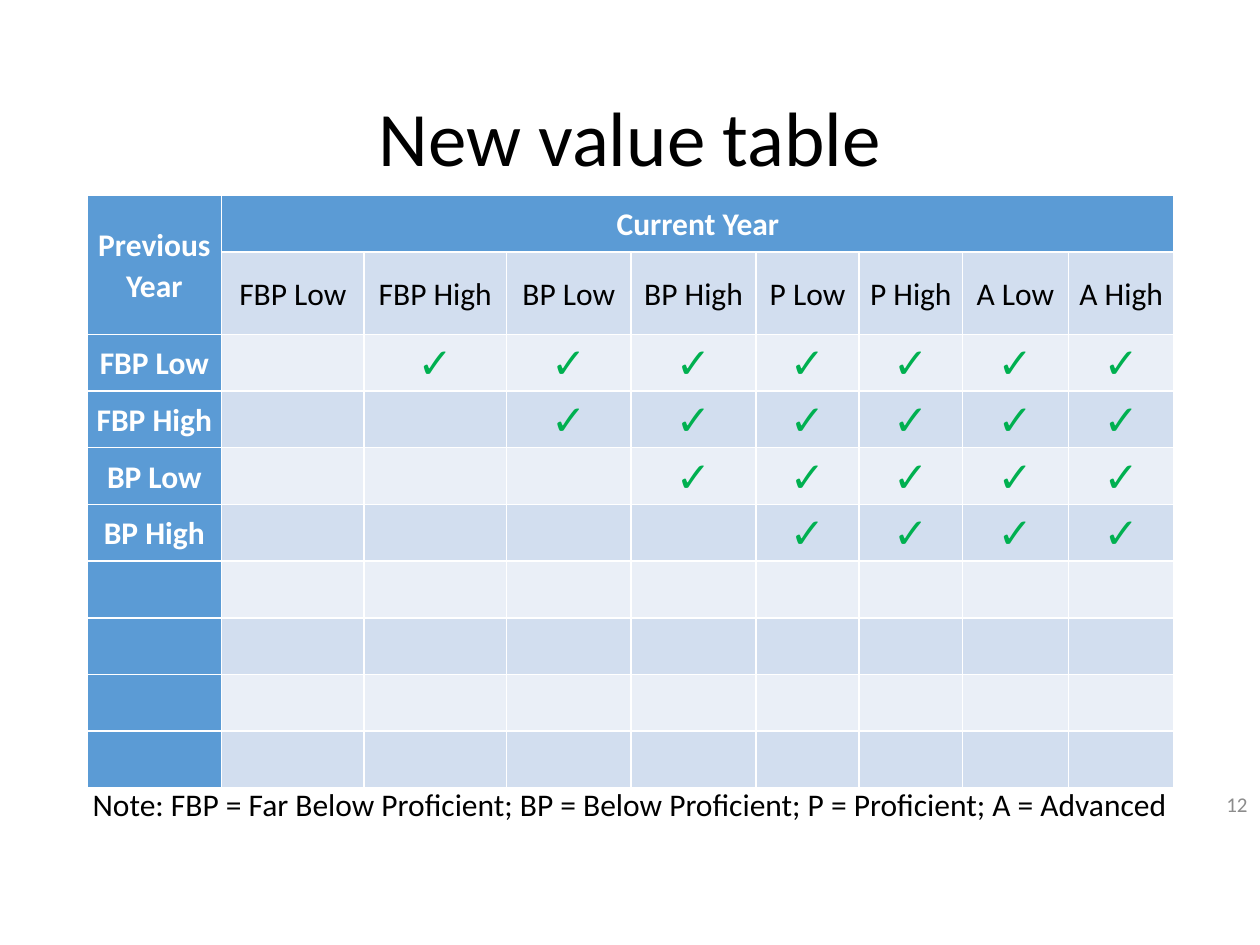
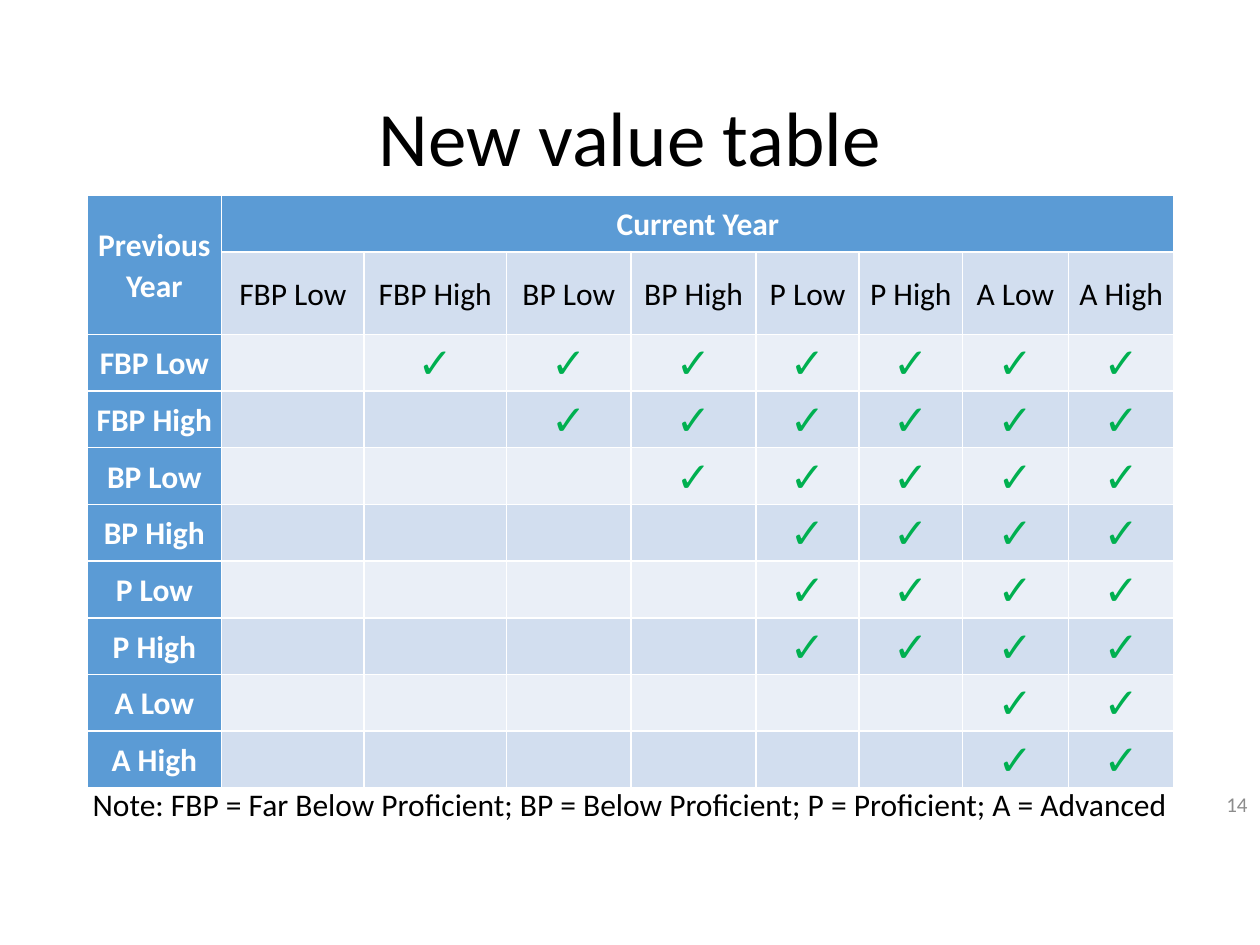
"""Builds two slides showing the new value table, half filled and then complete."""
from dataclasses import dataclass

from pptx import Presentation
from pptx.dml.color import RGBColor
from pptx.enum.text import MSO_ANCHOR, PP_ALIGN
from pptx.presentation import Presentation as Deck
from pptx.slide import Slide
from pptx.table import _Cell as Cell
from pptx.text.text import TextFrame
from pptx.util import Inches, Pt

MIDDLE, TOP = MSO_ANCHOR.MIDDLE, MSO_ANCHOR.TOP
CENTER, RIGHT = PP_ALIGN.CENTER, PP_ALIGN.RIGHT

WHITE = RGBColor(0xFF, 0xFF, 0xFF)
BLACK = RGBColor(0x00, 0x00, 0x00)
GRAY = RGBColor(0x8C, 0x8C, 0x8C)
GREEN = RGBColor(0x00, 0xB0, 0x50)
HEADER_BLUE = RGBColor(0x5B, 0x9B, 0xD5)
BAND_DARK = RGBColor(0xD2, 0xDE, 0xEF)
BAND_LIGHT = RGBColor(0xEA, 0xEF, 0xF7)

FONT = "Calibri"
TITLE = "New value table"
NOTE = "Note: FBP = Far Below Proficient; BP = Below Proficient; P = Proficient; A = Advanced"
CHECK = "✓"
LEVELS = [f"{group} {half}" for group in ("FBP", "BP", "P", "A") for half in ("Low", "High")]
FIRST_CHECKED_LEVEL = [1, 2, 3, 4, 4, 4, 6, 6]
COLUMN_WIDTHS = [1.07, 1.13, 1.13, 0.99, 0.99, 0.82, 0.82, 0.84, 0.84]
ROW_HEIGHT = 0.45
HEADER_ROWS = 2
TITLE_ONLY_LAYOUT = 5


@dataclass(frozen=True)
class TextStyle:
    """Look of one kind of text."""
    size: int
    color: RGBColor
    bold: bool = False
    align: PP_ALIGN = CENTER
    anchor: MSO_ANCHOR = MIDDLE


@dataclass(frozen=True)
class ValuePage:
    """Page number and count of previous-year rows that are filled in."""
    number: int
    filled_rows: int


TITLE_STYLE = TextStyle(44, BLACK)
HEADER_STYLE = TextStyle(18, WHITE, bold=True)
LEVEL_STYLE = TextStyle(18, BLACK)
CHECK_STYLE = TextStyle(24, GREEN, bold=True)
NOTE_STYLE = TextStyle(18, BLACK, anchor=TOP)
NUMBER_STYLE = TextStyle(12, GRAY, align=RIGHT)
PAGES = [ValuePage(12, 4), ValuePage(14, 8)]


def write(frame: TextFrame, text: str, style: TextStyle) -> None:
    """Put styled text in a frame."""
    frame.text = text
    frame.word_wrap = True
    frame.vertical_anchor = style.anchor
    para = frame.paragraphs[0]
    para.alignment = style.align
    font = para.runs[0].font
    font.name, font.size, font.bold = FONT, Pt(style.size), style.bold
    font.color.rgb = style.color


def write_cell(cell: Cell, text: str, style: TextStyle) -> None:
    """Put styled text in a table cell."""
    write(cell.text_frame, text, style)
    cell.vertical_anchor = style.anchor
    cell.margin_left = cell.margin_right = Inches(0.07)
    cell.margin_top = cell.margin_bottom = Inches(0)
    para = cell.text_frame.paragraphs[0]
    para.line_spacing = 1.07
    para.space_after = Pt(8)


def add_text(page: Slide, left: float, width: float, text: str, style: TextStyle) -> None:
    """Add a text box on the line below the table."""
    box = page.shapes.add_textbox(Inches(left), Inches(6.18), Inches(width), Inches(0.4))
    write(box.text_frame, text, style)


def add_title(page: Slide) -> None:
    """Place and fill the title."""
    title = page.shapes.title
    title.left, title.top = Inches(0.69), Inches(0.4)
    title.width, title.height = Inches(8.62), Inches(1.45)
    write(title.text_frame, TITLE, TITLE_STYLE)
    title.text_frame.paragraphs[0].line_spacing = 0.9


def add_value_table(page: Slide, filled_rows: int) -> None:
    """Draw the table of previous-year levels against current-year levels."""
    row_count, column_count = HEADER_ROWS + len(LEVELS), len(COLUMN_WIDTHS)
    table = page.shapes.add_table(
        row_count, column_count, Inches(0.69), Inches(1.55),
        Inches(sum(COLUMN_WIDTHS)), Inches(ROW_HEIGHT * row_count)).table
    table.first_col = True
    for column, width in zip(table.columns, COLUMN_WIDTHS):
        column.width = Inches(width)
    for row_index, row in enumerate(table.rows):
        row.height = Inches(ROW_HEIGHT)
        band = BAND_DARK if row_index % 2 else BAND_LIGHT
        for column_index, cell in enumerate(row.cells):
            is_header = row_index == 0 or column_index == 0
            cell.fill.solid()
            cell.fill.fore_color.rgb = HEADER_BLUE if is_header else band

    table.cell(0, 0).merge(table.cell(1, 0))
    table.cell(0, 1).merge(table.cell(0, column_count - 1))
    write_cell(table.cell(0, 0), "Previous Year", HEADER_STYLE)
    write_cell(table.cell(0, 1), "Current Year", HEADER_STYLE)
    for column_index, level in enumerate(LEVELS, start=1):
        write_cell(table.cell(1, column_index), level, LEVEL_STYLE)
    for index in range(filled_rows):
        row_index = HEADER_ROWS + index
        write_cell(table.cell(row_index, 0), LEVELS[index], HEADER_STYLE)
        for column_index in range(FIRST_CHECKED_LEVEL[index] + 1, column_count):
            write_cell(table.cell(row_index, column_index), CHECK, CHECK_STYLE)


def add_page(deck: Deck, content: ValuePage) -> None:
    """Add one complete slide."""
    page = deck.slides.add_slide(deck.slide_layouts[TITLE_ONLY_LAYOUT])
    add_title(page)
    add_value_table(page, content.filled_rows)
    add_text(page, 0.37, 9.26, NOTE, NOTE_STYLE)
    add_text(page, 7.75, 2.25, str(content.number), NUMBER_STYLE)


def main() -> None:
    """Build and save the deck."""
    deck = Presentation()
    deck.slide_width, deck.slide_height = Inches(10), Inches(7.5)
    for content in PAGES:
        add_page(deck, content)
    deck.save("out.pptx")


if __name__ == "__main__":
    main()
